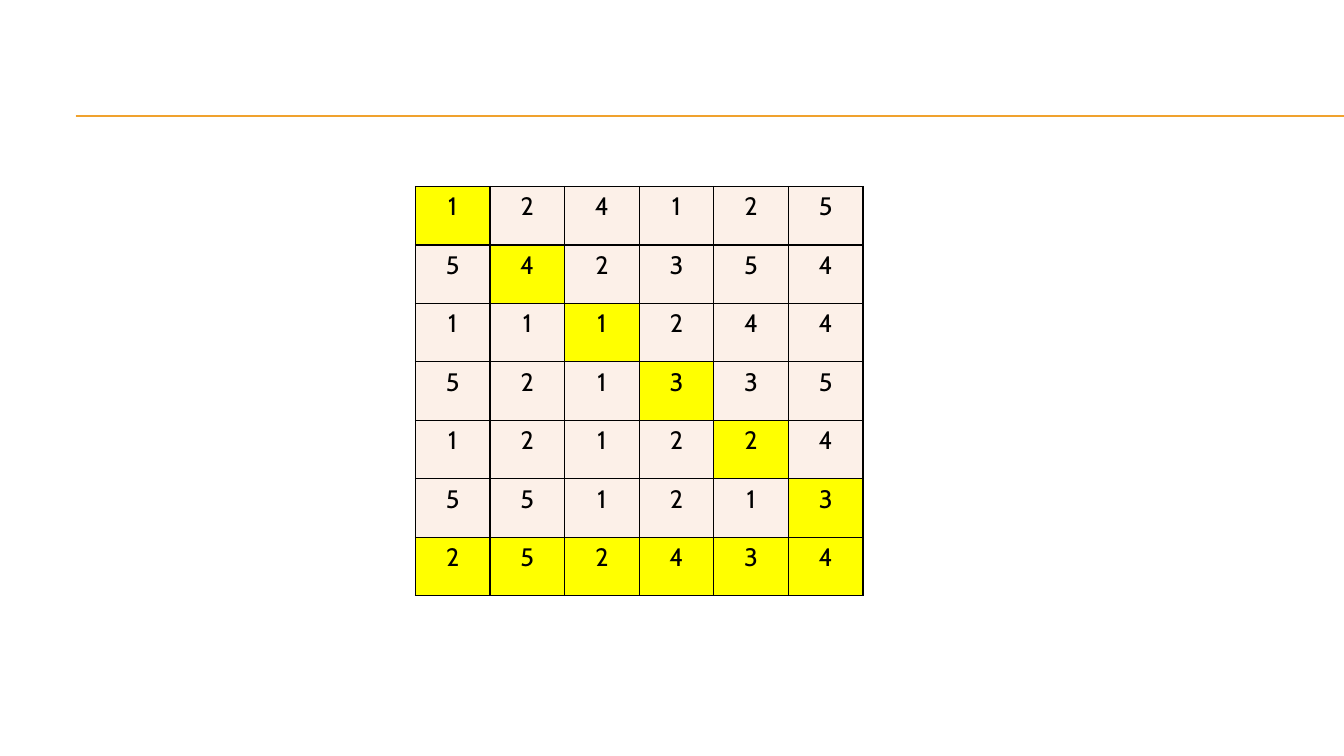
from lxml import etree
from pptx import Presentation
from pptx.dml.color import RGBColor as RGB
from pptx.enum.shapes import MSO_CONNECTOR as CONN
from pptx.enum.text import PP_ALIGN as ALIGN
from pptx.oxml.ns import qn
from pptx.util import Inches, Pt

COLORS = {
    "rule": "F0A22E",
    "mark": "FFFF00",
    "plain": "FCF0E8",
    "ink": "000000",
}
FONT = "Cabin"
GRID = [
    "124125",
    "542354",
    "111244",
    "521335",
    "121224",
    "551213",
    "252434",
]
COL_W, ROW_H = 0.74, 0.58


def color(name):
    return RGB.from_string(COLORS[name])


def add_rule(slide, y):
    line = slide.shapes.add_connector(
        CONN.STRAIGHT, Inches(0.75), Inches(y), Inches(13.33), Inches(y))
    line.line.color.rgb = color("rule")
    line.line.width = Pt(0.75)
    etree.SubElement(line._element.spPr, qn("a:effectLst"))


def make_line(tag, name, width):
    line = etree.Element(qn(tag), w=str(Pt(width)))
    fill = etree.SubElement(line, qn("a:solidFill"))
    etree.SubElement(fill, qn("a:srgbClr"), val=COLORS[name])
    return line


def fill_cell(cell, text, marked):
    cell.fill.solid()
    cell.fill.fore_color.rgb = color("mark" if marked else "plain")
    # Borders come before the fill in the cell properties
    props = cell._tc.get_or_add_tcPr()
    for i, side in enumerate("LRTB"):
        props.insert(i, make_line("a:ln" + side, "ink", 1))
    para = cell.text_frame.paragraphs[0]
    para.alignment = ALIGN.CENTER
    run = para.add_run()
    run.text = text
    run.font.size = Pt(18)
    run.font.name = FONT
    run.font.color.rgb = color("ink")
    return run


def add_grid(slide):
    rows, cols = len(GRID), len(GRID[0])
    frame = slide.shapes.add_table(
        rows, cols, Inches(4.12), Inches(1.85),
        Inches(COL_W * cols), Inches(ROW_H * rows))
    table = frame.table
    table.first_row = table.horz_banding = False
    for col in table.columns:
        col.width = Inches(COL_W)
    for r, digits in enumerate(GRID):
        table.rows[r].height = Inches(ROW_H)
        for c, digit in enumerate(digits):
            # The diagonal and the last row stand out
            run = fill_cell(table.cell(r, c), digit, r == c or r == rows - 1)
            if r == c == 1:
                run.font._element.insert(0, make_line("a:ln", "mark", 0.75))


def main():
    deck = Presentation()
    deck.slide_width, deck.slide_height = Inches(13.33), Inches(7.5)
    slide = deck.slides.add_slide(deck.slide_layouts[6])

    # Double rule under the heading area
    for y in (1.15, 1.16):
        add_rule(slide, y)

    # Number grid
    add_grid(slide)
    deck.save("out.pptx")


if __name__ == "__main__":
    main()
